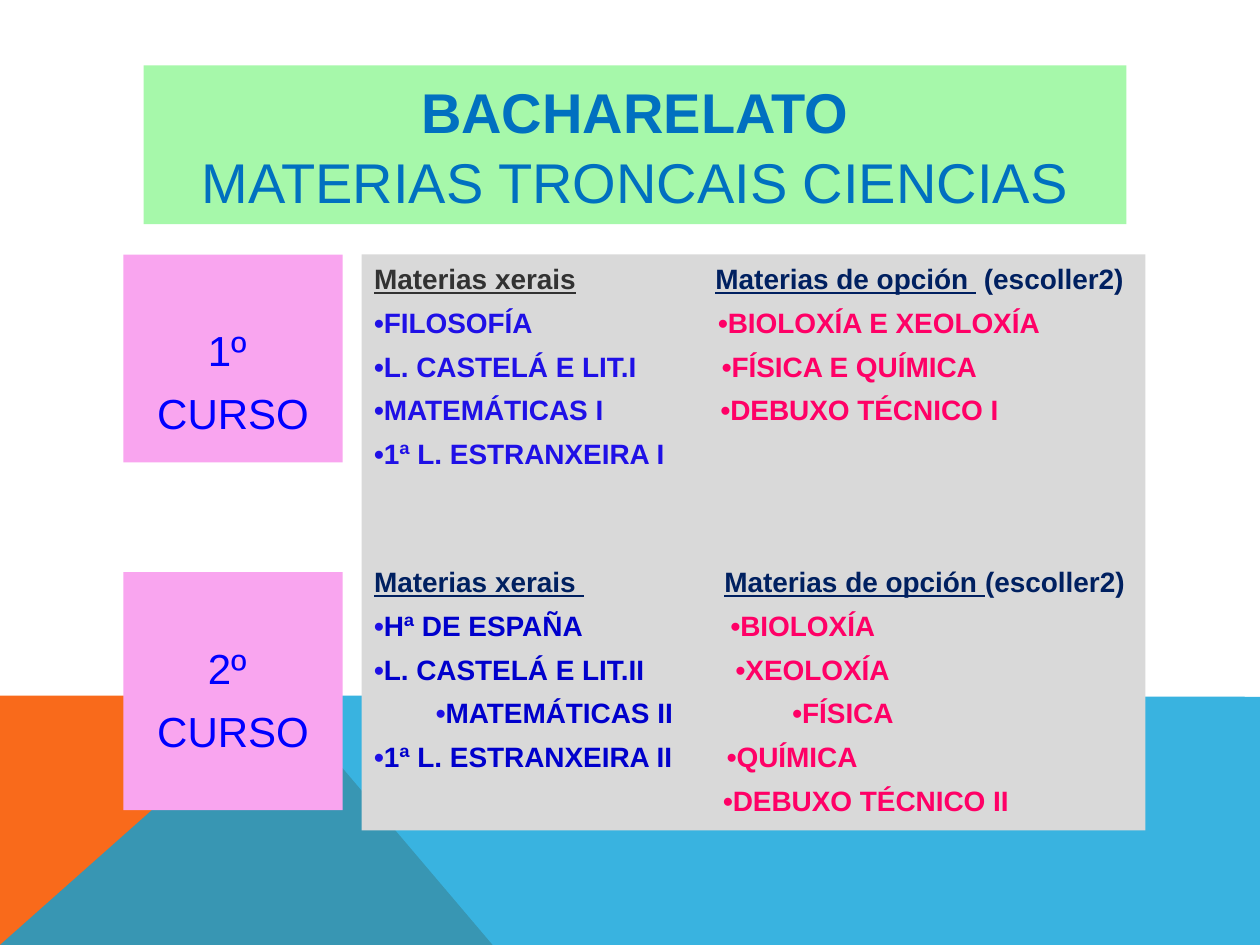
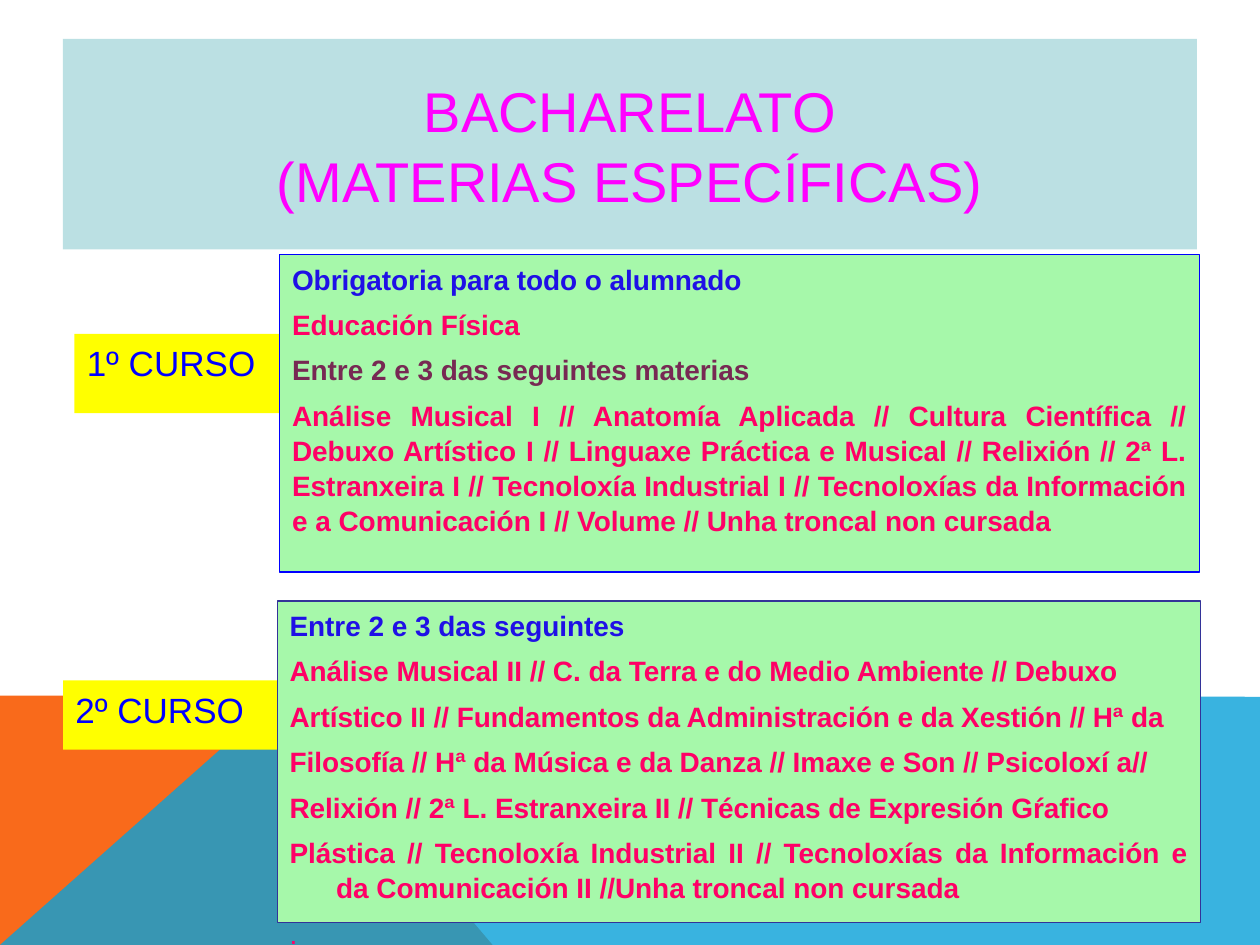
"""Build two slides on the Bacharelato subjects: core science and specific ones."""
from lxml import etree
from pptx import Presentation
from pptx.dml.color import RGBColor
from pptx.enum import shapes, text
from pptx.oxml import ns
from pptx.util import Inches, Pt

FONT = "Arial"
LINE_SPACING = 1.04
WHITE = RGBColor(0xFF, 0xFF, 0xFF)
ORANGE = RGBColor(0xF9, 0x6A, 0x1B)
SKY = RGBColor(0x08, 0xA1, 0xD9)
GREEN = RGBColor(0xA6, 0xF8, 0xAA)
PINK = RGBColor(0xF9, 0xA5, 0xEF)
GREY = RGBColor(0xD9, 0xD9, 0xD9)
PALE_TEAL = RGBColor(0xBB, 0xE0, 0xE3)
YELLOW = RGBColor(0xFF, 0xFF, 0x00)
TITLE_BLUE = RGBColor(0x00, 0x70, 0xC0)
MAGENTA = RGBColor(0xFF, 0x00, 0xFF)
BLUE = RGBColor(0x00, 0x00, 0xFF)
INDIGO = RGBColor(0x33, 0x33, 0x99)
VIOLET_BLUE = RGBColor(0x1F, 0x10, 0xE6)
DARK_BLUE = RGBColor(0x00, 0x00, 0xCC)
NAVY = RGBColor(0x00, 0x20, 0x60)
CHARCOAL = RGBColor(0x32, 0x32, 0x32)
CRIMSON = RGBColor(0xFF, 0x00, 0x66)
PLUM = RGBColor(0x77, 0x29, 0x53)

BANDS = [
    (ORANGE, None, [(0, 7.5), (0, 5.52), (2.23, 5.52), (3.91, 7.5)]),
    (SKY, 80, [(0, 7.5), (2.23, 5.52), (10, 5.53), (10, 7.5)]),
]

CORE_COURSES = [
    {"label": ["1º ", "CURSO"], "top": 2.02, "height": 1.65, "text": VIOLET_BLUE, "gap": 5,
     "heading": ("Materias xerais", CHARCOAL, 2.71, "Materias de opción ", " (escoller2)"),
     "rows": [("FILOSOFÍA", 0, "BIOLOXÍA E XEOLOXÍA", 2.73),
              ("L. CASTELÁ E LIT.I", 0, "FÍSICA E QUÍMICA", 2.76),
              ("MATEMÁTICAS I", 0, "DEBUXO TÉCNICO I", 2.75),
              ("1ª L. ESTRANXEIRA I", 0, "", 0)]},
    {"label": ["2º ", "CURSO"], "top": 4.54, "height": 1.89, "text": DARK_BLUE, "gap": 53.4,
     "heading": ("Materias xerais ", NAVY, 2.78, "Materias de opción ", "(escoller2)"),
     "rows": [("Hª DE ESPAÑA", 0, "BIOLOXÍA", 2.83),
              ("L. CASTELÁ E LIT.II", 0, "XEOLOXÍA", 2.87),
              ("MATEMÁTICAS II", 0.49, "FÍSICA", 3.32),
              ("1ª L. ESTRANXEIRA II", 0, "QUÍMICA", 2.8),
              ("", 0, "DEBUXO TÉCNICO II", 2.77)]},
]

SPECIFIC_COURSES = [
    {"label": "1º CURSO", "label_at": (0.59, 2.65, 1.81, 0.63),
     "box_at": (2.22, 2.02, 7.3, 2.52), "line": BLUE, "hanging": 0,
     "lines": [
         ("Obrigatoria para todo o alumnado", VIOLET_BLUE),
         ("Educación Física", CRIMSON),
         ("Entre 2 e 3 das seguintes materias", PLUM),
         ("Análise Musical I // Anatomía Aplicada // Cultura Científica // "
          "Debuxo Artístico I // Linguaxe Práctica e Musical // Relixión // "
          "2ª L. Estranxeira I // Tecnoloxía Industrial I // Tecnoloxías da Información "
          "e a Comunicación I // Volume // Unha troncal non cursada", CRIMSON)]},
    {"label": "2º CURSO", "label_at": (0.5, 5.4, 1.82, 0.55),
     "box_at": (2.2, 4.77, 7.33, 2.55), "line": INDIGO, "hanging": 0.37,
     "lines": [
         ("Entre 2 e 3 das seguintes", VIOLET_BLUE),
         ("Análise Musical II // C. da Terra e do Medio Ambiente // Debuxo", CRIMSON),
         ("Artístico II // Fundamentos da Administración e da Xestión // Hª da", CRIMSON),
         ("Filosofía // Hª da Música e da Danza // Imaxe e Son // Psicoloxí a//", CRIMSON),
         ("Relixión // 2ª L. Estranxeira II // Técnicas de Expresión Gŕafico", CRIMSON),
         ("Plástica // Tecnoloxía Industrial II // Tecnoloxías da Información e "
          "da Comunicación II //Unha troncal non cursada", CRIMSON),
         (".", CRIMSON)]},
]


def paint(shape, fill, line=None):
    shape.shadow.inherit = False
    shape.fill.solid()
    shape.fill.fore_color.rgb = fill
    if line is None:
        shape.line.fill.background()
    else:
        shape.line.color.rgb = line
        shape.line.width = Pt(0.75)


def add_bands(page):
    for color, opacity, points in BANDS:
        corners = [(Inches(x), Inches(y)) for x, y in points]
        builder = page.shapes.build_freeform(*corners[0], scale=1.0)
        builder.add_line_segments(corners[1:], close=True)
        band = builder.convert_to_shape()
        paint(band, color)
        if opacity:
            fill = band.fill.fore_color
            tint = band.element.spPr.find(ns.qn("a:solidFill")).find(ns.qn("a:srgbClr"))
            etree.SubElement(tint, ns.qn("a:alpha"), val=str(opacity * 1000))


def add_page(deck):
    page = deck.slides.add_slide(deck.slide_layouts[6])
    page.background.fill.solid()
    page.background.fill.fore_color.rgb = WHITE
    add_bands(page)
    return page


def add_box(page, at, fill, line=None, anchor=text.MSO_ANCHOR.TOP, inset_top=0.05):
    box = page.shapes.add_shape(shapes.MSO_SHAPE.RECTANGLE, *map(Inches, at))
    paint(box, fill, line)
    frame = box.text_frame
    frame.word_wrap = True
    frame.vertical_anchor = anchor
    frame.margin_left = frame.margin_right = Inches(0.1)
    frame.margin_top, frame.margin_bottom = Inches(inset_top), Inches(0.05)
    return frame


def add_para(frame, spans, size, before=0, align=text.PP_ALIGN.LEFT, tabs=(), hanging=0):
    first = frame.paragraphs[0]
    para = frame.add_paragraph() if first.runs else first
    para.alignment = align
    para.line_spacing = LINE_SPACING
    para.space_before = Pt(before)
    properties = para._p.get_or_add_pPr()
    if hanging:
        properties.set("marL", str(Inches(hanging)))
        properties.set("indent", str(-Inches(hanging)))
    if tabs:
        stops = etree.SubElement(properties, ns.qn("a:tabLst"))
        for position in tabs:
            etree.SubElement(stops, ns.qn("a:tab"), pos=str(Inches(position)), algn="l")
    for words, color, bold, underline in spans:
        span = para.add_run()
        span.text = words
        span.font.name, span.font.size = FONT, Pt(size)
        span.font.color.rgb = color
        span.font.bold, span.font.underline = bold, underline


def add_title(page, at, fill, color, lines):
    frame = add_box(page, at, fill, anchor=text.MSO_ANCHOR.MIDDLE)
    for words, bold in lines:
        add_para(frame, [(words, color, bold, False)], 32, align=text.PP_ALIGN.CENTER)


def add_subject_row(frame, subject, indent, option, option_at, color):
    spans = [("\t", color, True, False)] if indent else []
    if subject:
        spans += [("•", VIOLET_BLUE, True, False), (subject, color, True, False)]
    if option:
        spans += [("\t", color, True, False), ("•" + option, CRIMSON, True, False)]
    add_para(frame, spans, 16, 5, tabs=[stop for stop in (indent, option_at) if stop])


def build_core_page(deck):
    page = add_page(deck)
    add_title(page, (1.14, 0.52, 7.8, 1.26), GREEN, TITLE_BLUE,
              [("BACHARELATO", True), ("MATERIAS TRONCAIS CIENCIAS", False)])
    panel = add_box(page, (2.87, 2.02, 6.22, 4.57), GREY)
    for course in CORE_COURSES:
        label = add_box(page, (0.98, course["top"], 1.74, course["height"]), PINK, inset_top=0.54)
        for words in course["label"]:
            add_para(label, [(words, BLUE, False, False)], 24, 6, text.PP_ALIGN.CENTER)
        general, color, option_at, option, note = course["heading"]
        add_para(panel, [(general, color, True, True), ("\t", color, True, False),
                         (option, NAVY, True, True), (note, NAVY, True, False)],
                 16, course["gap"], tabs=[option_at])
        for row in course["rows"]:
            add_subject_row(panel, *row, course["text"])


def build_specific_page(deck):
    page = add_page(deck)
    add_title(page, (0.5, 0.31, 9, 1.67), PALE_TEAL, MAGENTA,
              [("BACHARELATO", False), ("(MATERIAS ESPECÍFICAS)", False)])
    for course in SPECIFIC_COURSES:
        label = add_box(page, course["label_at"], YELLOW)
        add_para(label, [(course["label"], BLUE, False, False)], 20, 6)
        box = add_box(page, course["box_at"], GREEN, course["line"])
        for words, color in course["lines"]:
            align = text.PP_ALIGN.JUSTIFY if len(words) > 70 else text.PP_ALIGN.LEFT
            add_para(box, [(words, color, words != ".", False)], 16, 6, align,
                     hanging=course["hanging"])


def main():
    deck = Presentation()
    deck.slide_width, deck.slide_height = Inches(10), Inches(7.5)
    build_core_page(deck)
    build_specific_page(deck)
    deck.save("out.pptx")


if __name__ == "__main__":
    main()
